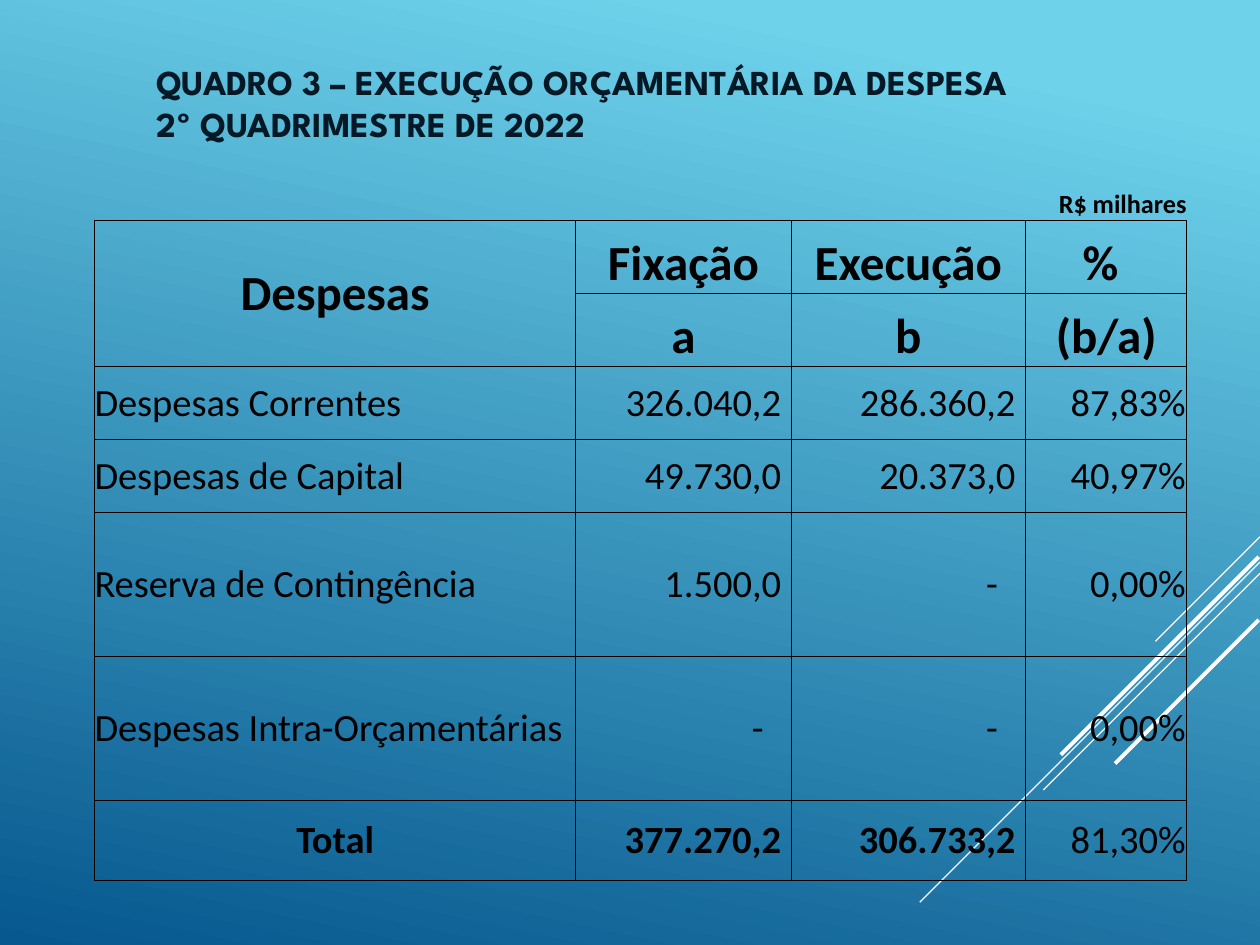
import lxml.etree
import pptx
import pptx.util
import pptx.dml.color
import pptx.enum.shapes
import pptx.enum.text
import pptx.oxml
import pptx.oxml.ns

Inches = pptx.util.Inches
Pt = pptx.util.Pt
RGB = pptx.dml.color.RGBColor
Align = pptx.enum.text.PP_ALIGN
Anchor = pptx.enum.text.MSO_ANCHOR

BLACK = RGB(0, 0, 0)
WHITE = RGB(255, 255, 255)
NAVY = RGB(0x05, 0x18, 0x25)
SKY = RGB(0x6E, 0xD2, 0xEB)
DEEP = RGB(0x06, 0x58, 0x8E)

COLS = [3.82, 0.12, 1.59, 0.91, 0.95, 1.28]
ROWS = [0.83, 0.58, 0.58, 0.58, 0.58, 1.14, 1.14, 0.64]
STARTS = [0, 1, 3, 5]  # first grid column of each visible column
HEADS = [
    ["Despesas", "Fixação", "Execução", "%"],
    ["", "a", "b", "(b/a)"],
]
BODY = [
    ["Despesas Correntes", "326.040,2", "286.360,2", "87,83%"],
    ["Despesas de Capital", "49.730,0", "20.373,0", "40,97%"],
    ["Reserva de Contingência", "1.500,0", "-", "0,00%"],
    ["Despesas Intra-Orçamentárias", "-", "-", "0,00%"],
    ["Total", "377.270,2", "306.733,2", "81,30%"],
]
# Diagonal strokes: start x, start y, run (down and left), width
STROKES = [
    (10, 4.26, 0.83, 0.75),
    (10, 4.46, 2.7, 0.75),
    (10, 4.55, 1.72, 0.75),
    (9.99, 4.42, 1.57, 2.25),
    (9.99, 4.92, 1.14, 2.25),
]


def paint_back(slide):
    fill = slide.background.fill
    fill.gradient()
    fill.gradient_angle = 258
    for stop, spot, color in zip(fill.gradient_stops, (0.1, 1), (SKY, DEEP)):
        stop.position = spot
        stop.color.rgb = color


def add_strokes(slide):
    for x, y, run, width in STROKES:
        line = slide.shapes.add_connector(
            pptx.enum.shapes.MSO_CONNECTOR.STRAIGHT,
            Inches(x), Inches(y), Inches(x - run), Inches(y + run))
        line.line.color.rgb = WHITE
        line.line.width = Pt(width)
        lxml.etree.SubElement(line._element.spPr, pptx.oxml.ns.qn("a:effectLst"))


def set_title(slide, left, top, width, height):
    title = slide.shapes.title
    title.left, title.top = Inches(left), Inches(top)
    title.width, title.height = Inches(width), Inches(height)
    frame = title.text_frame
    frame.auto_size = pptx.enum.text.MSO_AUTO_SIZE.NONE
    frame.vertical_anchor = Anchor.MIDDLE
    frame.text = "QUADRO 3 – EXECUÇÃO ORÇAMENTÁRIA DA DESPESA\v2º QUADRIMESTRE DE 2022"
    para = frame.paragraphs[0]
    para.alignment = Align.LEFT
    font = para.font
    font.name, font.size, font.bold = "League Spartan", Pt(20), True
    font.color.rgb = NAVY


def set_edges(cell, sides):
    props = cell._tc.get_or_add_tcPr()
    space = pptx.oxml.ns.nsdecls("a")
    for side in "LRTB":
        fill = (f'<a:solidFill><a:srgbClr val="{BLACK}"/></a:solidFill>'
                if side in sides else "<a:noFill/>")
        props.append(pptx.oxml.parse_xml(
            f'<a:ln{side} {space} w="{int(Pt(0.5))}">{fill}</a:ln{side}>'))


def fill_cell(cell, text, size, bold, align, anchor=Anchor.MIDDLE, gap=0.0):
    cell.text = text
    cell.vertical_anchor = anchor
    cell.margin_right = Inches(gap)
    para = cell.text_frame.paragraphs[0]
    para.alignment = align
    font = para.font
    font.name, font.size, font.bold = "Calibri", Pt(size), bold
    font.color.rgb = BLACK


def add_grid(slide, left, top, width, height):
    table = slide.shapes.add_table(
        len(ROWS), len(COLS), Inches(left), Inches(top),
        Inches(width), Inches(height)).table
    table.first_row = table.horz_banding = False
    for col, size in zip(table.columns, COLS):
        col.width = Inches(size)
    for row, size in zip(table.rows, ROWS):
        row.height = Inches(size)

    # Borders: the unit row on top has only its lower edge
    for r in range(len(ROWS)):
        for c in range(len(COLS)):
            cell = table.cell(r, c)
            set_edges(cell, "LRTB" if r else "B")
            cell.fill.background()
            cell.margin_left = cell.margin_right = 0
            cell.margin_top = cell.margin_bottom = 0

    # Merged cells
    table.cell(1, 0).merge(table.cell(2, 0))
    for r in range(1, len(ROWS)):
        for c in STARTS[1:3]:
            table.cell(r, c).merge(table.cell(r, c + 1))

    # Unit and headings
    fill_cell(table.cell(0, 5), "R$ milhares", 15, True, Align.RIGHT, Anchor.BOTTOM)
    for r, heads in enumerate(HEADS, 1):
        for c, text in zip(STARTS, heads):
            if text:
                anchor = Anchor.BOTTOM if c else Anchor.MIDDLE
                # the percent sign stands a little left of centre
                gap = 0.09 if text == "%" else 0
                fill_cell(table.cell(r, c), text, 28, True, Align.CENTER, anchor, gap)

    # Figures
    for r, values in enumerate(BODY, 3):
        total = values[0] == "Total"
        for c, text in zip(STARTS, values):
            if c == 0:
                align, gap = (Align.CENTER if total else Align.LEFT), 0
            else:
                align = Align.RIGHT
                gap = 0.01 if c == 5 else 0.22 if text == "-" else 0.08
            fill_cell(table.cell(r, c), text, 22, total and c < 5, align, gap=gap)


def main():
    deck = pptx.Presentation()
    deck.slide_width, deck.slide_height = Inches(10), Inches(7.5)
    slide = deck.slides.add_slide(deck.slide_layouts[5])
    paint_back(slide)
    add_strokes(slide)
    set_title(slide, 1.14, 0.44, 8.5, 0.74)
    add_grid(slide, 0.75, 0.92, 8.66, 6.09)
    deck.save("out.pptx")


if __name__ == "__main__":
    main()
